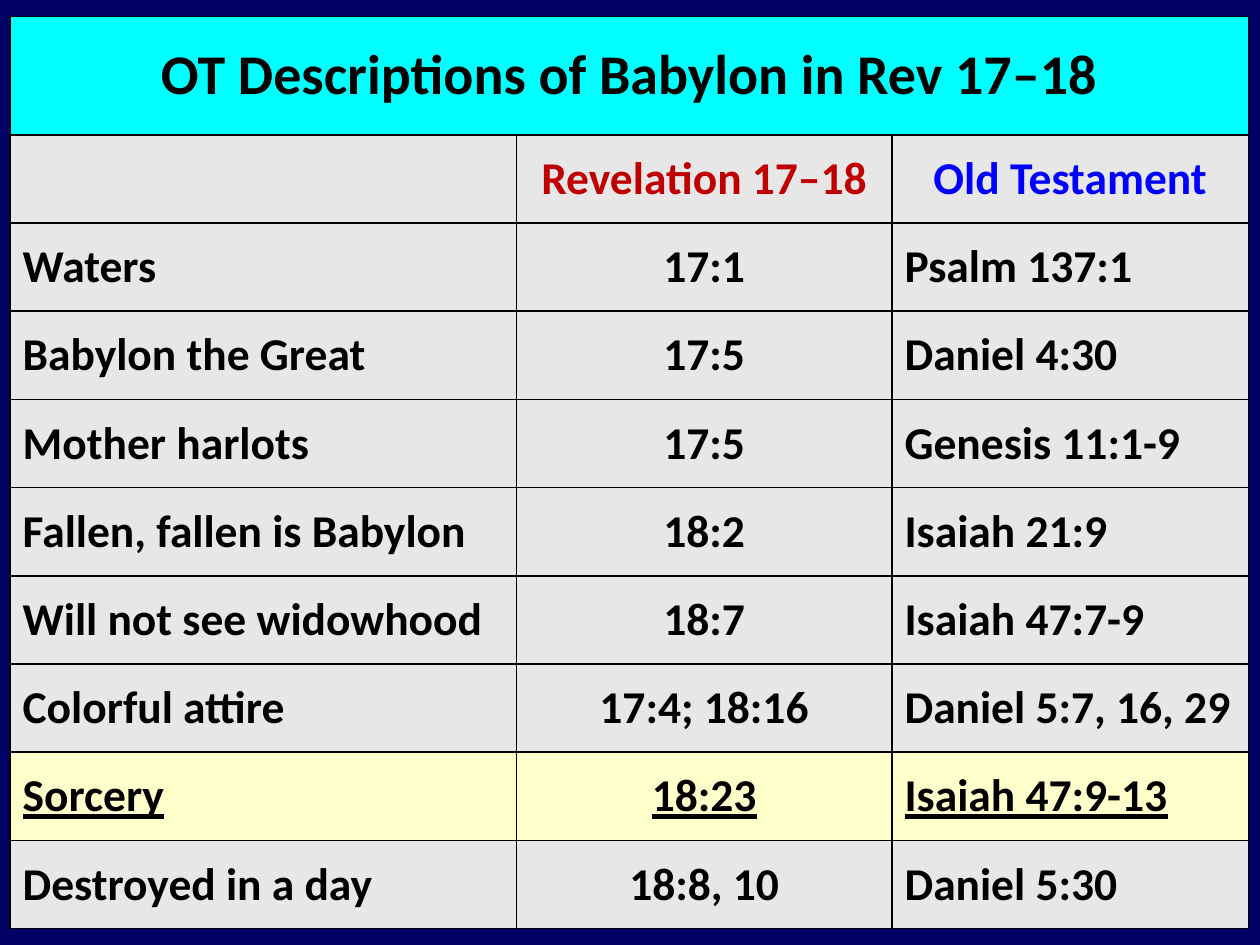
from dataclasses import dataclass

import lxml.etree
import pptx
import pptx.dml.color
import pptx.enum.text
import pptx.oxml.ns
import pptx.table
import pptx.util

RGB = pptx.dml.color.RGBColor.from_string
LEFT = pptx.enum.text.PP_ALIGN.LEFT
CENTER = pptx.enum.text.PP_ALIGN.CENTER


@dataclass(frozen=True)
class Theme:
    font: str = "Calibri"
    title_size: int = 32
    body_size: int = 26
    border_width: int = 1
    background: str = "000066"
    banner: str = "00FFFF"
    plain: str = "E7E7E7"
    highlight: str = "FFFFCC"
    ink: str = "000000"
    revelation: str = "C00000"
    old_testament: str = "0000FF"


@dataclass(frozen=True)
class Parallel:
    """One description of Babylon with its two passages."""
    description: str
    revelation: str
    old_testament: str
    emphasized: bool = False


THEME = Theme()
TITLE = "OT Descriptions of Babylon in Rev 17–18"
HEADINGS = [
    ("", THEME.ink),
    ("Revelation 17–18", THEME.revelation),
    ("Old Testament", THEME.old_testament),
]
PARALLELS = [
    Parallel("Waters", "17:1", "Psalm 137:1"),
    Parallel("Babylon the Great", "17:5", "Daniel 4:30"),
    Parallel("Mother harlots", "17:5", "Genesis 11:1-9"),
    Parallel("Fallen, fallen is Babylon", "18:2", "Isaiah 21:9"),
    Parallel("Will not see widowhood", "18:7", "Isaiah 47:7-9"),
    Parallel("Colorful attire", "17:4; 18:16", "Daniel 5:7, 16, 29"),
    Parallel("Sorcery", "18:23", "Isaiah 47:9-13", emphasized=True),
    Parallel("Destroyed in a day", "18:8, 10", "Daniel 5:30"),
]

# Slide grid: margins and columns are in inches, rows follow from the height
SLIDE_WIDTH, SLIDE_HEIGHT = 10, 7.5
MARGIN_LEFT, MARGIN_TOP = 0.08, 0.13
COLUMN_WIDTHS = [4.02, 2.98, 2.83]
TITLE_HEIGHT = 0.94
ROW_HEIGHT = 0.7
ROW_HEIGHTS = [TITLE_HEIGHT] + [ROW_HEIGHT] * (1 + len(PARALLELS))


def add_borders(cell: pptx.table._Cell) -> None:
    """Draw a thin line on all four sides of a cell."""
    properties = cell._tc.get_or_add_tcPr()
    qn = pptx.oxml.ns.qn
    width = str(int(pptx.util.Pt(THEME.border_width)))
    for position, side in enumerate(("lnL", "lnR", "lnT", "lnB")):
        line = lxml.etree.Element(qn(f"a:{side}"), w=width)
        fill = lxml.etree.SubElement(line, qn("a:solidFill"))
        lxml.etree.SubElement(fill, qn("a:srgbClr"), val=THEME.ink)
        properties.insert(position, line)


def fill_cell(cell: pptx.table._Cell, text: str, fill: str,
              align: pptx.enum.text.PP_ALIGN = CENTER, **font_values) -> None:
    """Set a cell's background, text and font."""
    cell.fill.solid()
    cell.fill.fore_color.rgb = RGB(fill)
    cell.vertical_anchor = pptx.enum.text.MSO_ANCHOR.MIDDLE
    if not text:
        return
    paragraph = cell.text_frame.paragraphs[0]
    paragraph.alignment = align
    run = paragraph.add_run()
    run.text = text
    color = font_values.pop("color", THEME.ink)
    values = {"name": THEME.font, "bold": True,
              "size": pptx.util.Pt(THEME.body_size)} | font_values
    for attribute, value in values.items():
        setattr(run.font, attribute, value)
    run.font.color.rgb = RGB(color)


def add_parallels_table(slide: pptx.slide.Slide) -> pptx.table.Table:
    """Add the empty grid with its column widths, row heights and borders."""
    inches = pptx.util.Inches
    table = slide.shapes.add_table(
        len(ROW_HEIGHTS), len(COLUMN_WIDTHS),
        inches(MARGIN_LEFT), inches(MARGIN_TOP),
        inches(sum(COLUMN_WIDTHS)), inches(sum(ROW_HEIGHTS))).table
    table.first_row = table.horz_banding = False
    for column, width in zip(table.columns, COLUMN_WIDTHS):
        column.width = inches(width)
    for row, height in zip(table.rows, ROW_HEIGHTS):
        row.height = inches(height)
    for cell in table.iter_cells():
        add_borders(cell)
    return table


def main() -> None:
    presentation = pptx.Presentation()
    presentation.slide_width = pptx.util.Inches(SLIDE_WIDTH)
    presentation.slide_height = pptx.util.Inches(SLIDE_HEIGHT)
    slide = presentation.slides.add_slide(presentation.slide_layouts[6])
    slide.background.fill.solid()
    slide.background.fill.fore_color.rgb = RGB(THEME.background)
    table = add_parallels_table(slide)

    # Title across all columns
    banner = table.cell(0, 0)
    banner.merge(table.cell(0, len(COLUMN_WIDTHS) - 1))
    fill_cell(banner, TITLE, THEME.banner,
              size=pptx.util.Pt(THEME.title_size))

    # Column headings
    for column, (heading, color) in enumerate(HEADINGS):
        fill_cell(table.cell(1, column), heading, THEME.plain, color=color)

    # Descriptions and their passages
    for row, parallel in enumerate(PARALLELS, start=2):
        fill = THEME.highlight if parallel.emphasized else THEME.plain
        texts = (parallel.description, parallel.revelation,
                 parallel.old_testament)
        for column, (text, align) in enumerate(
                zip(texts, (LEFT, CENTER, LEFT))):
            fill_cell(table.cell(row, column), text, fill, align,
                      underline=parallel.emphasized)

    presentation.save("out.pptx")


if __name__ == "__main__":
    main()
